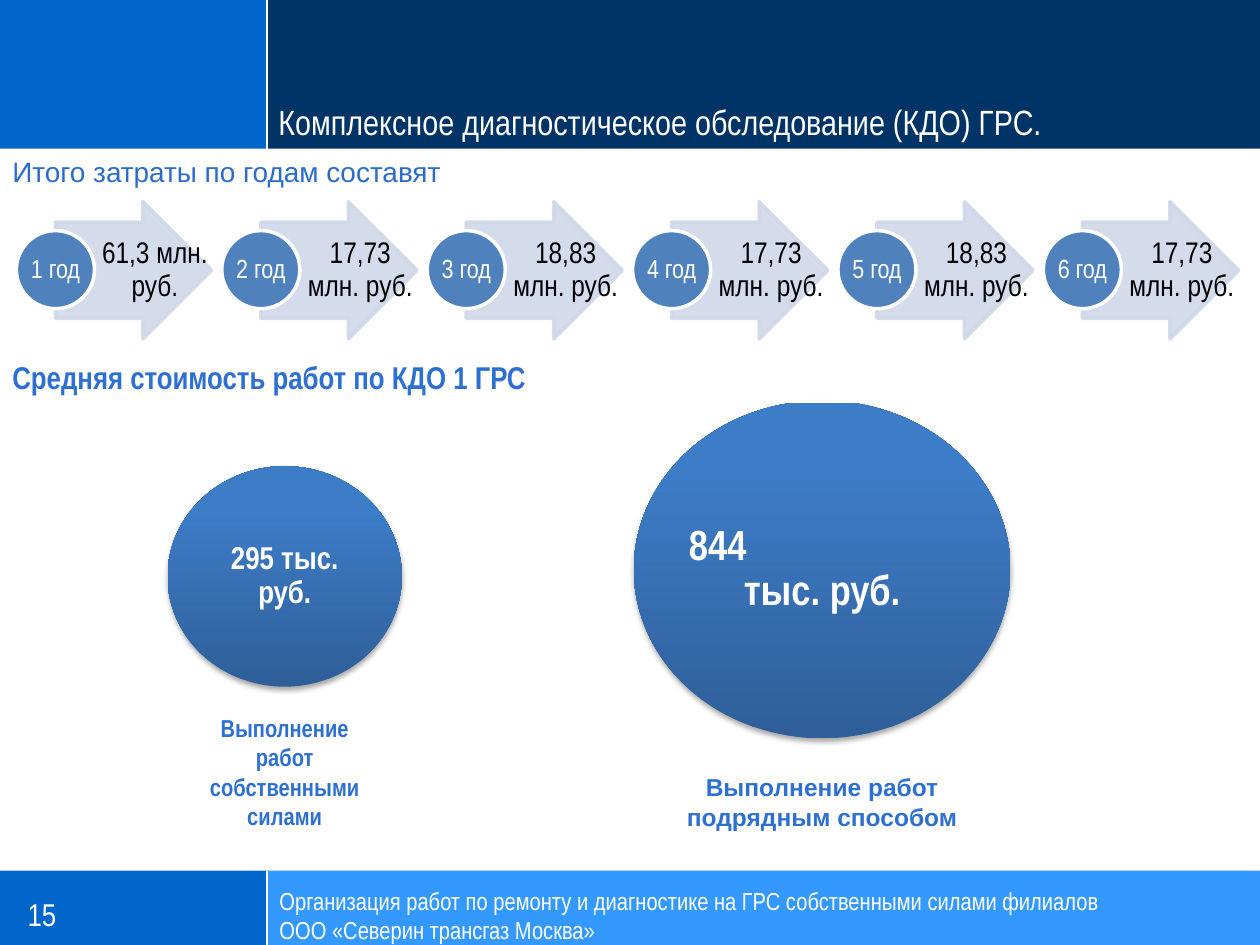
from lxml import etree
from pptx import Presentation
from pptx import util as u
from pptx.dml.color import RGBColor
from pptx.enum import shapes, text
from pptx.oxml.ns import qn

WHITE = RGBColor(0xFF, 0xFF, 0xFF)
BLACK = RGBColor(0, 0, 0)
BLUE = RGBColor(0x00, 0x66, 0xCC)
SKY = RGBColor(0x33, 0x99, 0xFF)
NAVY = RGBColor(0x00, 0x33, 0x66)
PALE = RGBColor(0xD0, 0xD8, 0xE8)
STEEL = RGBColor(0x4F, 0x81, 0xBD)
LEAD = RGBColor(0x2B, 0x6C, 0xCB)
LABEL = RGBColor(0x2E, 0x70, 0xD2)
DEEP = RGBColor(0x2F, 0x5F, 0x99)
BRIGHT = RGBColor(0x3D, 0x7C, 0xC7)

LEFT, MID = text.PP_ALIGN.LEFT, text.PP_ALIGN.CENTER
TOP, CENTER, BASE = (text.MSO_ANCHOR.TOP, text.MSO_ANCHOR.MIDDLE,
                     text.MSO_ANCHOR.BOTTOM)
KIND = shapes.MSO_SHAPE


def fade(parent, pct):
    """Set the opacity of every plain colour under an element."""
    for tone in parent.iter(qn("a:srgbClr")):
        etree.SubElement(tone, qn("a:alpha"), val=str(pct * 1000))


class Page:
    font = "Arial Narrow"
    pads = (0.1, 0.05, 0.1, 0.05)

    def __init__(self, deck):
        self.slide = deck.slides.add_slide(deck.slide_layouts[5])
        self.items = self.slide.shapes

    def fill_text(self, shape, lines, size, color=WHITE, bold=False,
                  align=LEFT, anchor=TOP, pads=None, wrap=True, gap=1.0,
                  font=None):
        frame = shape.text_frame
        left, top, right, base = (u.Inches(p) for p in pads or self.pads)
        look = {"word_wrap": wrap, "vertical_anchor": anchor,
                "auto_size": text.MSO_AUTO_SIZE.NONE,
                "margin_left": left, "margin_top": top,
                "margin_right": right, "margin_bottom": base}
        for key, val in look.items():
            setattr(frame, key, val)
        frame.text = lines
        style = {"name": font or self.font, "size": u.Pt(size), "bold": bold}
        for par in frame.paragraphs:
            par.alignment, par.line_spacing = align, gap
            for key, val in style.items():
                setattr(par.font, key, val)
            par.font.color.rgb = color

    def shape(self, kind, box, fill, line=None, width=2):
        item = self.items.add_shape(kind, *(u.Inches(v) for v in box))
        item.shadow.inherit = False
        item.fill.solid()
        item.fill.fore_color.rgb = fill
        if line is None:
            item.line.fill.background()
        else:
            item.line.color.rgb = line
            item.line.width = u.Pt(width)
        return item

    def label(self, box, lines, size, frame=False, **look):
        item = self.items.add_textbox(*(u.Inches(v) for v in box))
        if frame:
            item.line.color.rgb = WHITE
            item.line.width = u.Pt(0.75)
        self.fill_text(item, lines, size, **look)

    def rule(self, x, top, base):
        line = self.items.add_connector(
            shapes.MSO_CONNECTOR.STRAIGHT,
            *(u.Inches(v) for v in (x, top, x, base)))
        line.line.color.rgb = WHITE
        line.line.width = u.Pt(1.25)
        etree.SubElement(line._element.spPr, qn("a:effectLst"))

    def title(self, box, words, size):
        item = self.items.title
        keys = ("left", "top", "width", "height")
        for key, val in zip(keys, box):
            setattr(item, key, u.Inches(val))
        self.fill_text(item, words, size, anchor=BASE)
        # Bring the title in front of the header band
        item.element.getparent().append(item.element)

    def step(self, x, year, cost):
        arrow = self.shape(KIND.RIGHT_ARROW, (x + 0.31, 1.6, 1.24, 1.09),
                           PALE, PALE)
        arrow.adjustments[0], arrow.adjustments[1] = 0.7, 0.5
        fade(arrow._element.spPr, 90)
        self.label((x + 0.62, 1.6, 0.93, 1.09), f"{cost} млн. руб.", 17,
                   color=BLACK, align=MID, anchor=CENTER, gap=0.9,
                   pads=(0.05, 0.01, 0.02, 0.01))
        dot = self.shape(KIND.OVAL, (x, 1.83, 0.62, 0.62), STEEL, WHITE)
        self.fill_text(dot, f"{year} год", 15, align=MID, anchor=CENTER,
                       pads=(0.01,) * 4, wrap=False, gap=0.9)

    def bubble(self, box, lines, size, pad):
        ball = self.shape(KIND.OVAL, box, BRIGHT)
        ball.fill.gradient()
        ball.fill.gradient_angle = 90
        stops = ball.fill.gradient_stops
        for stop, place, tone in zip(stops, (0, 0.8), (DEEP, BRIGHT)):
            stop.position, stop.color.rgb = place, tone
        # Soft shadow below the circle
        glow = etree.SubElement(
            ball._element.spPr.find(qn("a:effectLst")), qn("a:outerShdw"),
            blurRad=str(u.Pt(3.1)), dist=str(u.Pt(1.8)), dir="5400000",
            rotWithShape="0")
        etree.SubElement(glow, qn("a:srgbClr"), val="000000")
        fade(glow, 35)
        self.fill_text(ball, lines, size, bold=True, align=MID,
                       anchor=CENTER, pads=(pad, 0, pad, 0), gap=0.9)
        return ball


def main():
    deck = Presentation()
    deck.slide_width, deck.slide_height = u.Inches(10), u.Inches(7.5)
    page = Page(deck)

    # Header and footer bands
    split = 2.12
    for top, high, tone in ((6.91, 0.59, SKY), (0, 1.18, NAVY)):
        page.shape(KIND.RECTANGLE, (0, top, split, high), BLUE)
        page.shape(KIND.RECTANGLE, (split, top, 10 - split, high), tone)
        page.rule(split, top, top + high)
    page.label((0.12, 7.05, split, 0.41), "15", 18)
    page.label((split, 7.03, 7.27, 0.47),
               "Организация работ по ремонту и диагностике на ГРС "
               "собственными силами филиалов\n"
               "ООО «Северин трансгаз Москва»", 14, pads=(0.1, 0, 0.1, 0))
    page.title((2.11, 0, 7.89, 1.18),
               "Комплексное диагностическое обследование (КДО) ГРС.", 20)

    # Costs by year
    page.label((0, 1.18, 9.83, 0.37), "Итого затраты по годам составят", 16,
               color=LEAD, font="Arial")
    costs = ("61,3", "17,73", "18,83", "17,73", "18,83", "17,73")
    for i, cost in enumerate(costs):
        page.step(0.13 + 1.63 * i, i + 1, cost)

    # Average cost comparison
    page.bubble((1.33, 3.7, 1.86, 1.75), "295 тыс. руб.", 18, 0.05)
    large = page.bubble((5.03, 3.18, 2.99, 2.68), "844\nтыс. руб.", 24, 0)
    large.text_frame.paragraphs[0].alignment = LEFT
    page.label((0, 2.79, 9.57, 0.4), "Средняя стоимость работ по КДО 1 ГРС",
               18, frame=True, color=LABEL, bold=True)
    page.label((1.43, 5.61, 1.66, 1.04),
               "Выполнение работ собственными силами", 14, frame=True,
               color=LABEL, bold=True, align=MID)
    page.label((5.03, 6.08, 2.99, 0.57),
               "Выполнение работ подрядным способом", 14,
               color=LABEL, bold=True, align=MID, font="Arial")

    deck.save("out.pptx")


if __name__ == "__main__":
    main()
